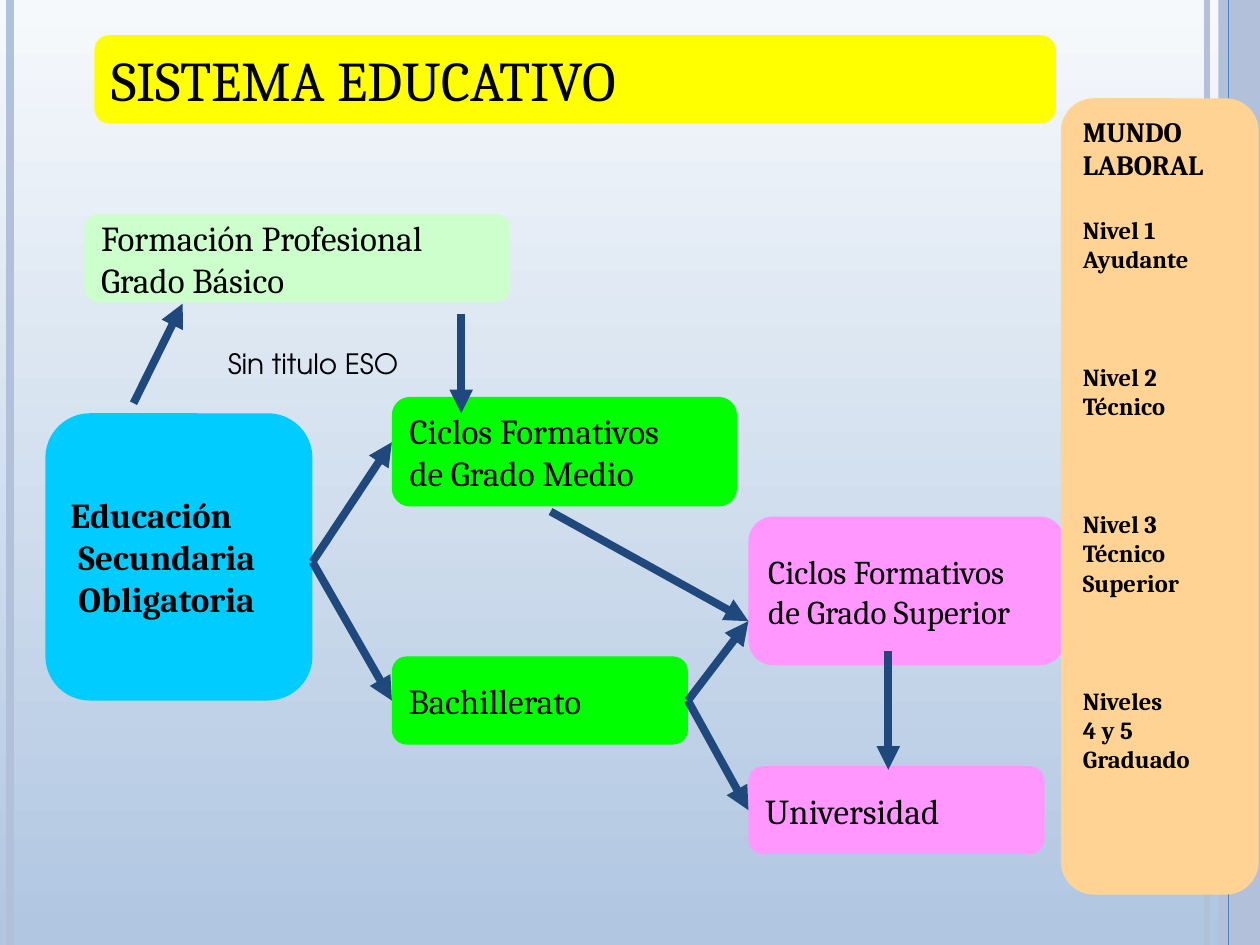
from pptx import Presentation
from pptx.dml.color import RGBColor
from pptx.enum import shapes, text
from pptx.oxml.ns import qn
from pptx.util import Inches, Pt
from lxml import etree

BLACK = RGBColor(0, 0, 0)
NAVY = RGBColor(0x1F, 0x49, 0x7D)
BLUE = RGBColor(0x4F, 0x81, 0xBD)
PALE = RGBColor(0xB2, 0xC0, 0xDA)
SKY_TOP = RGBColor(0xF6, 0xF9, 0xFC)
SKY_END = RGBColor(0xB0, 0xC6, 0xE1)
YELLOW = RGBColor(0xFF, 0xFF, 0x00)
GREEN = RGBColor(0x00, 0xFF, 0x00)
MINT = RGBColor(0xCC, 0xFF, 0xCC)
PINK = RGBColor(0xFF, 0x97, 0xFF)
CYAN = RGBColor(0x00, 0xCC, 0xFF)
PEACH = RGBColor(0xFF, 0xD3, 0x93)
SERIF, SANS = "Cambria", "TeX Gyre Adventor"
TOP, LEFT, BOTTOM, RIGHT = range(4)


def add_para(frame, words, size, font=SERIF, bold=False, first=False, gap=0):
    para = frame.paragraphs[0] if first else frame.add_paragraph()
    para.alignment = text.PP_ALIGN.LEFT
    para.space_before = Pt(gap)
    run = para.add_run()
    run.text = words
    run.font.size, run.font.name, run.font.bold = Pt(size), font, bold
    run.font.color.rgb = BLACK


def add_block(slide, box, fill, kind=shapes.MSO_SHAPE.ROUNDED_RECTANGLE):
    block = slide.shapes.add_shape(kind, *map(Inches, box))
    block.shadow.inherit = False
    block.fill.solid()
    block.fill.fore_color.rgb = fill
    block.line.fill.background()
    return block


def add_card(slide, box, fill, lines, size=20, bold=False):
    card = add_block(slide, box, fill)
    frame = card.text_frame
    frame.word_wrap = True
    frame.vertical_anchor = text.MSO_ANCHOR.MIDDLE
    for i, line in enumerate(lines):
        add_para(frame, line, size, bold=bold, first=i == 0)
    return card


def add_line(slide, start, end, color, width, arrow=False):
    line = slide.shapes.add_connector(
        shapes.MSO_CONNECTOR.STRAIGHT, *map(Inches, (*start, *end)))
    line.line.color.rgb = color
    line.line.width = Pt(width)
    if arrow:
        tip = etree.SubElement(line.line._get_or_add_ln(), qn("a:tailEnd"))
        tip.set("type", "triangle")
    etree.SubElement(line._element.spPr, qn("a:effectLst"))
    return line


def draw_frame(slide, width, height):
    """Gradient background with the vertical stripes at both edges."""
    fill = slide.background.fill
    fill.gradient()
    fill.gradient_angle = 270
    for stop, color in zip(fill.gradient_stops, (SKY_TOP, SKY_END)):
        stop.color.rgb = color

    def stripe(x, color, weight):
        add_line(slide, (x, 0), (x, height), color, weight)

    stripe(width - 0.42, PALE, 3)
    stripe(0.08, PALE, 4.5)
    stripe(width - 0.17, BLUE, 1.5)
    add_block(slide, (width - 0.33, 0, 0.33, height), PALE,
              shapes.MSO_SHAPE.RECTANGLE)
    stripe(width - 0.25, BLUE, 0.75)


def draw_flow(slide, x, y):
    """School stages and the arrows between them, from the corner x, y."""
    def card(left, top, wide, high, *rest, **style):
        return add_card(slide, (x + left, y + top, wide, high), *rest, **style)

    def arrow(start, end, source=None, target=None):
        (ax, ay), (bx, by) = start, end
        line = add_line(slide, (x + ax, y + ay), (x + bx, y + by),
                        NAVY, 4.5, arrow=True)
        if source:
            line.begin_connect(source, RIGHT)
        if target:
            line.end_connect(target, LEFT)

    bach = card(2.75, 3.51, 2.35, 0.7, GREEN, ["Bachillerato"])
    univ = card(5.58, 4.38, 2.35, 0.7, PINK, ["Universidad"])
    card(2.75, 1.45, 2.74, 0.87, GREEN,
         ["Ciclos Formativos", "de Grado Medio"])
    card(5.58, 2.4, 2.51, 1.18, PINK,
         ["Ciclos Formativos", "de Grado Superior"], size=19)
    card(0, 1.58, 2.12, 2.28, CYAN,
         ["Educación", " Secundaria", " Obligatoria"], bold=True)
    card(0.31, 0, 3.38, 0.7, MINT, ["Formación Profesional", "Grado Básico"])

    eso, upper = (2.12, 2.76), (5.58, 3.23)
    fork = (5.1, 3.86)
    arrow(eso, (2.75, 1.81))
    arrow(eso, (2.75, 3.86), target=bach)
    arrow(fork, upper, source=bach)
    arrow(fork, (5.58, 4.73), source=bach, target=univ)
    arrow((0.7, 1.5), (1.09, 0.71))
    arrow((4.01, 2.36), upper)
    arrow((3.3, 0.79), (3.3, 1.58))
    arrow((6.69, 3.47), (6.69, 4.41))

    note = slide.shapes.add_textbox(
        *map(Inches, (x + 1.35, y + 1, 1.7, 0.36))).text_frame
    note.word_wrap = True
    add_para(note, "Sin titulo ESO", 16, SANS, first=True)


def draw_panel(slide, box):
    frame = add_block(slide, box, PEACH).text_frame
    frame.word_wrap = True
    frame.vertical_anchor = text.MSO_ANCHOR.TOP
    add_para(frame, "MUNDO", 16, bold=True, first=True)
    add_para(frame, "LABORAL", 16, bold=True)
    levels = [
        (19, ["Nivel 1", "Ayudante"]),
        (50.5, ["Nivel 2", "Técnico"]),
        (50.5, ["Nivel 3", "Técnico", "Superior"]),
        (50.5, ["Niveles", "4 y 5", "Graduado"]),
    ]
    for gap, lines in levels:
        for i, line in enumerate(lines):
            add_para(frame, line, 14, bold=True, gap=0 if i else gap)


def main():
    deck = Presentation()
    deck.slide_width, deck.slide_height = Inches(10), Inches(7.5)
    slide = deck.slides.add_slide(deck.slide_layouts[6])
    draw_frame(slide, 10, 7.5)
    add_card(slide, (0.75, 0.28, 7.63, 0.7), YELLOW,
             ["SISTEMA EDUCATIVO"], size=32)
    draw_flow(slide, 0.36, 1.7)
    draw_panel(slide, (8.42, 0.78, 1.57, 6.32))
    deck.save("out.pptx")


if __name__ == "__main__":
    main()
